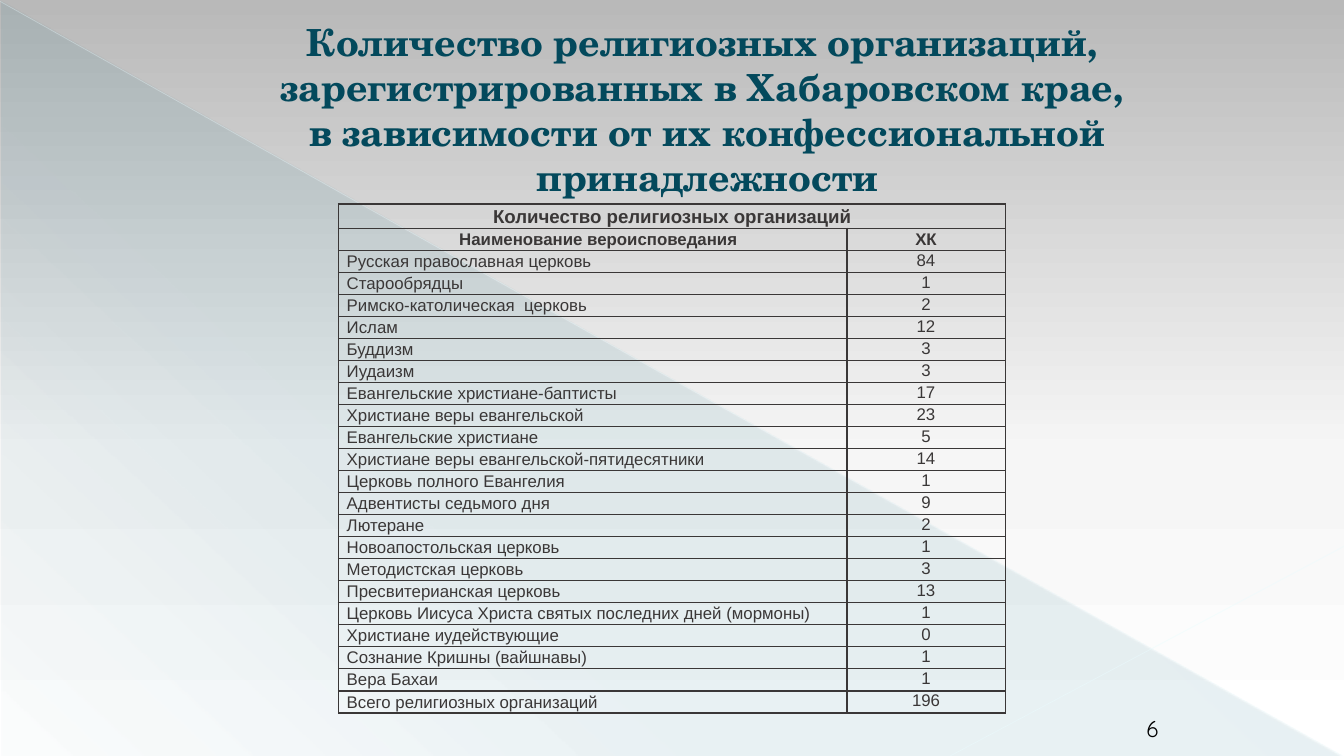
from lxml import etree
from pptx import Presentation
from pptx.dml.color import RGBColor
from pptx.enum.shapes import MSO_CONNECTOR, MSO_SHAPE
from pptx.enum.text import MSO_ANCHOR as Anchor, PP_ALIGN as Align
from pptx.oxml.ns import qn
from pptx.util import Inches, Pt

SLIDE_WIDTH = 10
SLIDE_HEIGHT = SLIDE_WIDTH * 9 / 16

BLACK = RGBColor(0x00, 0x00, 0x00)
DARK_GRAY = RGBColor(0x3A, 0x37, 0x37)
TITLE_TEAL = RGBColor(0x03, 0x49, 0x5C)
TEAL = RGBColor(0x04, 0x61, 0x7B)
GRAY = RGBColor(0xB9, 0xB9, 0xB9)
PALE_GRAY = RGBColor(0xF6, 0xF6, 0xF6)
WHITE = RGBColor(0xFF, 0xFF, 0xFF)
LONG_LINE = RGBColor(0xE9, 0xFC, 0xFF)
SHORT_LINE = RGBColor(0xEB, 0xFC, 0xFF)

TITLE = (
    "Количество религиозных организаций, \v"
    "зарегистрированных в Хабаровском крае, \v"
    "в зависимости от их конфессиональной принадлежности"
)
HEADER_ROWS = 2
ROWS = [
    ("Количество религиозных организаций", ""),
    ("Наименование вероисповедания", "ХК"),
    ("Русская православная церковь", "84"),
    ("Старообрядцы", "1"),
    ("Римско-католическая  церковь", "2"),
    ("Ислам", "12"),
    ("Буддизм", "3"),
    ("Иудаизм", "3"),
    ("Евангельские христиане-баптисты", "17"),
    ("Христиане веры евангельской", "23"),
    ("Евангельские христиане", "5"),
    ("Христиане веры евангельской-пятидесятники", "14"),
    ("Церковь полного Евангелия", "1"),
    ("Адвентисты седьмого дня", "9"),
    ("Лютеране", "2"),
    ("Новоапостольская церковь", "1"),
    ("Методистская церковь", "3"),
    ("Пресвитерианская церковь", "13"),
    ("Церковь Иисуса Христа святых последних дней (мормоны)", "1"),
    ("Христиане иудействующие", "0"),
    ("Сознание Кришны (вайшнавы)", "1"),
    ("Вера Бахаи", "1"),
    ("Всего религиозных организаций", "196"),
]


def add_color(parent, color, opacity=100):
    element = etree.SubElement(parent, qn("a:srgbClr"), val=str(color))
    if opacity < 100:
        etree.SubElement(element, qn("a:alpha"), val=str(opacity * 1000))


def replace_with_gradient(solid_fill, stops, angle):
    """Swap a solid fill for a gradient of (position, color, opacity) stops."""
    gradient = etree.Element(qn("a:gradFill"), rotWithShape="1")
    stop_list = etree.SubElement(gradient, qn("a:gsLst"))
    for position, color, opacity in stops:
        stop = etree.SubElement(stop_list, qn("a:gs"), pos=str(position * 1000))
        add_color(stop, color, opacity)
    etree.SubElement(gradient, qn("a:lin"), ang=str(angle * 60000), scaled="0")
    solid_fill.getparent().replace(solid_fill, gradient)


def add_thin_line(slide, start, end, color, width, opacity):
    points = [Inches(value) for value in (*start, *end)]
    line = slide.shapes.add_connector(MSO_CONNECTOR.STRAIGHT, *points)
    line.line.width = Pt(width)
    line.line.color.rgb = color
    fill = line.element.xpath("./p:spPr/a:ln/a:solidFill")[0]
    fill.clear()
    add_color(fill, color, opacity)
    etree.SubElement(line.element.spPr, qn("a:effectLst"))


def add_backdrop(slide, left, top, width, height):
    slide.background.fill.solid()
    replace_with_gradient(
        slide.element.xpath(".//p:bgPr/a:solidFill")[0],
        [(0, GRAY, 100), (60, PALE_GRAY, 100), (100, WHITE, 100)], 90)

    triangle = slide.shapes.add_shape(
        MSO_SHAPE.RIGHT_TRIANGLE, Inches(left + 0.01), Inches(top + 0.01),
        Inches(width - 0.02), Inches(height - 0.01))
    triangle.shadow.inherit = False
    triangle.line.fill.background()
    triangle.fill.solid()
    replace_with_gradient(
        triangle.element.xpath("./p:spPr/a:solidFill")[0],
        [(0, TEAL, 10), (70, TEAL, 8), (100, TEAL, 1)], 133)

    right, bottom = left + width, top + height
    add_thin_line(slide, (left, top + 0.01), (right - 0.01, bottom),
                  LONG_LINE, 0.39, 35)
    add_thin_line(slide, (right, bottom - 1.56), (right - 2.93, bottom),
                  SHORT_LINE, 0.47, 45)


def style_paragraph(paragraph, font_name, size, color, bold=False, align=Align.CENTER):
    paragraph.alignment = align
    font = paragraph.font
    font.name, font.size, font.bold = font_name, Pt(size), bold
    font.color.rgb = color


def add_text(slide, text, left, top, width, height, anchor):
    """Add a wrapping text box and return its paragraph."""
    box = slide.shapes.add_textbox(
        Inches(left), Inches(top), Inches(width), Inches(height))
    frame = box.text_frame
    frame.word_wrap = True
    frame.vertical_anchor = anchor
    frame.text = text
    return frame.paragraphs[0]


def add_title(slide, left, top, width, height):
    paragraph = add_text(slide, TITLE, left, top, width, height, Anchor.MIDDLE)
    style_paragraph(paragraph, "TeX Gyre Schola", 20, TITLE_TEAL, bold=True)
    properties = paragraph._p.get_or_add_pPr()
    properties.set("marL", str(Inches(0.53)))
    properties.set("indent", "0")


def add_page_number(slide, left, top, width, height):
    paragraph = add_text(slide, "6", left, top, width, height, Anchor.BOTTOM)
    style_paragraph(paragraph, "Quicksand", 12, BLACK)


def add_borders(cell):
    properties = cell._tc.get_or_add_tcPr()
    for side in ("lnL", "lnR", "lnT", "lnB"):
        border = etree.SubElement(properties, qn(f"a:{side}"), w=str(Pt(1)))
        add_color(etree.SubElement(border, qn("a:solidFill")), DARK_GRAY)


def fill_cell(cell, text, row, column):
    is_header = row < HEADER_ROWS
    is_name = column == 0 and not is_header
    add_borders(cell)
    cell.fill.background()
    cell.margin_left = cell.margin_right = Inches(0.06)
    cell.margin_top = cell.margin_bottom = 0
    cell.vertical_anchor = Anchor.MIDDLE if is_header or is_name else Anchor.TOP
    cell.text = text
    paragraph = cell.text_frame.paragraphs[0]
    paragraph.line_spacing = 1.05
    style_paragraph(paragraph, "Arial", 10 if row == 0 else 9, DARK_GRAY,
                    bold=is_header, align=Align.LEFT if is_name else Align.CENTER)


def add_confession_table(slide, left, top, width, height):
    table = slide.shapes.add_table(
        len(ROWS), 2, Inches(left), Inches(top), Inches(width), Inches(height)).table
    table.first_row = table.horz_banding = False
    count_width = 1.18
    table.columns[0].width = Inches(width - count_width)
    table.columns[1].width = Inches(count_width)
    heading_height = 0.18
    row_height = (height - heading_height) / (len(ROWS) - 1)
    for row, texts in enumerate(ROWS):
        table.rows[row].height = Inches(row_height if row else heading_height)
        for column, text in enumerate(texts):
            fill_cell(table.cell(row, column), text, row, column)
    table.cell(0, 0).merge(table.cell(0, 1))
    name_header = table.cell(1, 0).text_frame.paragraphs[0]
    name_header._p.get_or_add_pPr().set("indent", str(Inches(0.08)))


def main():
    presentation = Presentation()
    presentation.slide_width = Inches(SLIDE_WIDTH)
    presentation.slide_height = Inches(SLIDE_HEIGHT)
    slide = presentation.slides.add_slide(presentation.slide_layouts[6])
    add_backdrop(slide, 0, 0, SLIDE_WIDTH, SLIDE_HEIGHT)
    add_title(slide, 0.5, 0.22, 9, 1.18)
    add_confession_table(slide, 2.52, 1.52, 4.96, 3.79)
    add_page_number(slide, 8.3, 5.32, 0.55, 0.25)
    presentation.save("out.pptx")


if __name__ == "__main__":
    main()
